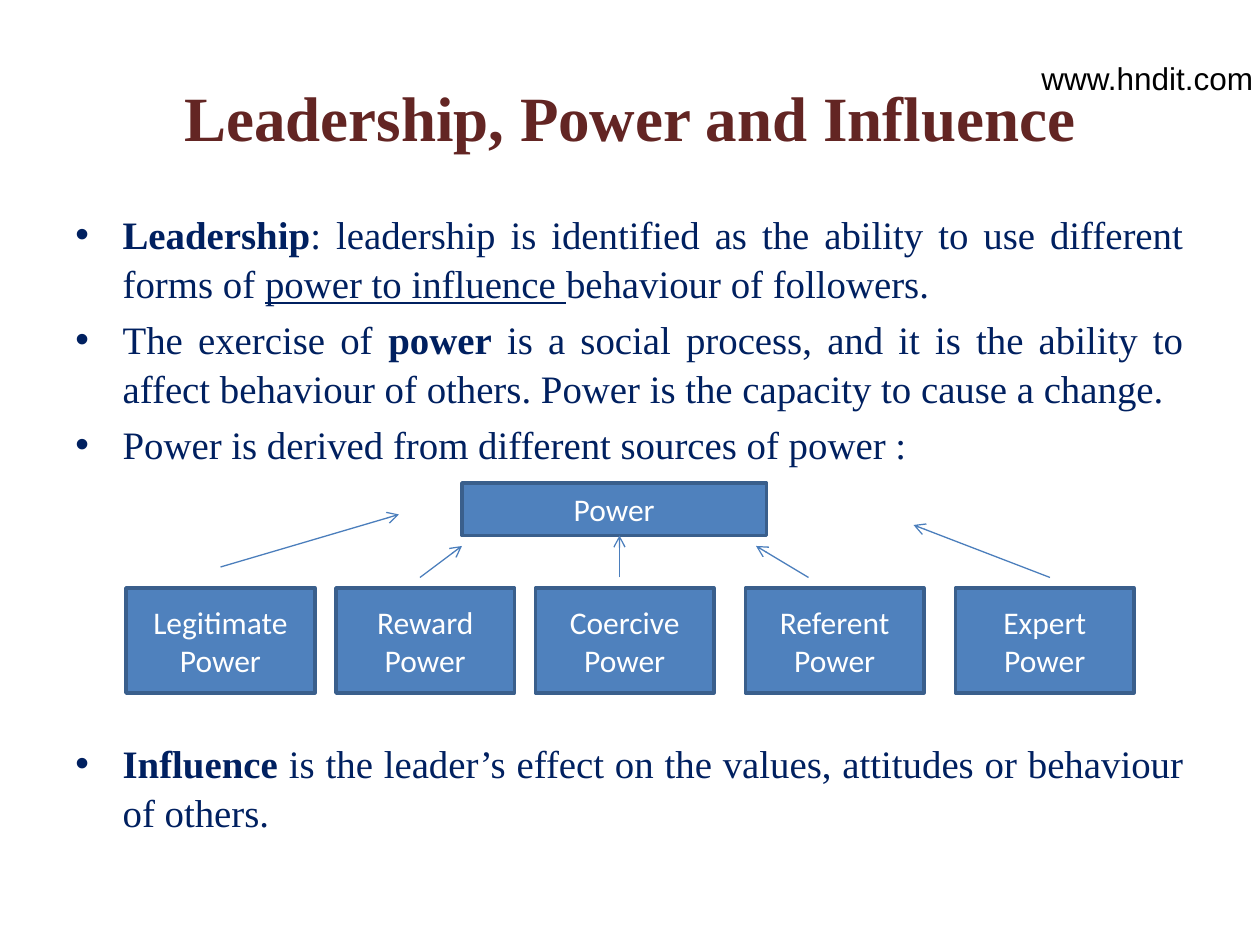
from dataclasses import dataclass

from lxml.etree import SubElement
from pptx import Presentation
from pptx.dml.color import RGBColor
from pptx.enum.shapes import MSO_CONNECTOR, MSO_SHAPE
from pptx.enum.text import MSO_ANCHOR, PP_ALIGN
from pptx.oxml.ns import qn
from pptx.util import Pt


@dataclass(frozen=True)
class Theme:
    title_color: RGBColor = RGBColor(0x63, 0x25, 0x23)
    body_color: RGBColor = RGBColor(0x00, 0x20, 0x60)
    box_fill: RGBColor = RGBColor(0x4F, 0x81, 0xBD)
    box_line: RGBColor = RGBColor(0x3A, 0x5F, 0x8C)
    arrow: RGBColor = RGBColor(0x4B, 0x7E, 0xBC)
    white: RGBColor = RGBColor(0xFF, 0xFF, 0xFF)
    black: RGBColor = RGBColor(0x00, 0x00, 0x00)
    serif: str = "Times New Roman"
    label_font: str = "Calibri"
    address_font: str = "Arial"
    title_size: float = 36
    body_size: float = 22.2
    label_size: float = 18


@dataclass(frozen=True)
class Box:
    """A rectangle in points."""
    left: float
    top: float
    width: float
    height: float

    def lengths(self) -> tuple:
        return Pt(self.left), Pt(self.top), Pt(self.width), Pt(self.height)


@dataclass(frozen=True)
class Run:
    text: str
    bold: bool = False
    underline: bool = False


@dataclass(frozen=True)
class Source:
    """A source of power, with the arrow that leads from it."""
    lines: tuple[str, ...]
    left: float
    arrow_start: tuple[float, float]
    arrow_end: tuple[float, float]
    width: float = 102


THEME = Theme()
SOURCE_TOP, SOURCE_HEIGHT = 336, 60
POWER_BOX = Box(264, 276, 174, 30)
SOURCES = [
    Source(("Legitimate Power",), 72, (126, 324), (228, 294), width=108),
    Source(("Reward Power",), 192, (240, 330), (264, 312)),
    Source(("Coercive Power",), 306, (354, 330), (354, 306)),
    Source(("Referent", "Power"), 426, (462, 330), (432, 312)),
    Source(("Expert Power",), 546, (600, 330), (522, 300)),
]
DEFINITIONS = [
    [Run("Leadership", bold=True),
     Run(": leadership is identified as the ability to use different forms of "),
     Run("power to influence ", underline=True),
     Run("behaviour of followers.")],
    [Run("The exercise of "), Run("power", bold=True),
     Run(" is a social process, and it is the ability to affect behaviour of "
         "others. Power is the capacity to cause a change.")],
    [Run("Power is derived from different sources of power :")],
]
INFLUENCE = [
    [Run("Influence", bold=True),
     Run(" is the leader’s effect on the values, attitudes or behaviour of others.")],
]


def add_bullet(paragraph) -> None:
    properties = paragraph._p.get_or_add_pPr()
    properties.set("marL", str(Pt(27)))
    properties.set("indent", str(Pt(-27)))
    SubElement(properties, qn("a:buFont"), typeface="Arial")
    SubElement(properties, qn("a:buChar"), char="•")


def write_text(shape, paragraphs: list[list[Run]], *, font: str, size: float,
               color: RGBColor, align=PP_ALIGN.LEFT, anchor=MSO_ANCHOR.TOP,
               bullets: bool = False, line_spacing: float = 1,
               space_before: float = 0) -> None:
    frame = shape.text_frame
    frame.word_wrap = True
    frame.vertical_anchor = anchor
    for index, runs in enumerate(paragraphs):
        paragraph = frame.add_paragraph() if index else frame.paragraphs[0]
        if bullets:
            add_bullet(paragraph)
        paragraph.alignment = align
        paragraph.line_spacing = line_spacing
        if index:
            paragraph.space_before = Pt(space_before)
        for part in runs:
            run = paragraph.add_run()
            run.text = part.text
            run.font.name = font
            run.font.size = Pt(size)
            run.font.bold = part.bold
            run.font.underline = part.underline
            run.font.color.rgb = color


def add_text(slide, box: Box, paragraphs: list[list[Run]], **text_format) -> None:
    write_text(slide.shapes.add_textbox(*box.lengths()), paragraphs, **text_format)


def add_bullet_list(slide, box: Box, paragraphs: list[list[Run]]) -> None:
    add_text(slide, box, paragraphs, font=THEME.serif, size=THEME.body_size,
             color=THEME.body_color, align=PP_ALIGN.JUSTIFY, bullets=True,
             line_spacing=1.05, space_before=4.2)


def add_label_box(slide, box: Box, lines: tuple[str, ...]) -> None:
    shape = slide.shapes.add_shape(MSO_SHAPE.RECTANGLE, *box.lengths())
    shape.shadow.inherit = False
    shape.fill.solid()
    shape.fill.fore_color.rgb = THEME.box_fill
    shape.line.color.rgb = THEME.box_line
    shape.line.width = Pt(2)
    write_text(shape, [[Run(line)] for line in lines], font=THEME.label_font,
               size=THEME.label_size, color=THEME.white,
               align=PP_ALIGN.CENTER, anchor=MSO_ANCHOR.MIDDLE)


def add_arrow(slide, start: tuple[float, float], end: tuple[float, float]) -> None:
    connector = slide.shapes.add_connector(
        MSO_CONNECTOR.STRAIGHT, *(Pt(value) for value in start + end))
    connector.line.color.rgb = THEME.arrow
    connector.line.width = Pt(0.75)
    SubElement(connector.line._get_or_add_ln(), qn("a:tailEnd"), type="arrow")
    SubElement(connector._element.spPr, qn("a:effectLst"))


def main() -> None:
    presentation = Presentation()
    presentation.slide_width, presentation.slide_height = Pt(720), Pt(540)
    slide = presentation.slides.add_slide(presentation.slide_layouts[6])

    add_bullet_list(slide, Box(36, 115.4, 648, 150), DEFINITIONS)
    add_bullet_list(slide, Box(36, 417.7, 648, 64), INFLUENCE)
    add_text(slide, Box(36, 21.6, 648, 90),
             [[Run("Leadership, Power and Influence", bold=True)]],
             font=THEME.serif, size=THEME.title_size, color=THEME.title_color,
             align=PP_ALIGN.CENTER, anchor=MSO_ANCHOR.MIDDLE)

    add_label_box(slide, POWER_BOX, ("Power",))
    for source in SOURCES:
        box = Box(source.left, SOURCE_TOP, source.width, SOURCE_HEIGHT)
        add_label_box(slide, box, source.lines)
        add_arrow(slide, source.arrow_start, source.arrow_end)

    add_text(slide, Box(588, 30, 174, 36), [[Run("www.hndit.com")]],
             font=THEME.address_font, size=THEME.label_size, color=THEME.black)
    presentation.save("out.pptx")


if __name__ == "__main__":
    main()
